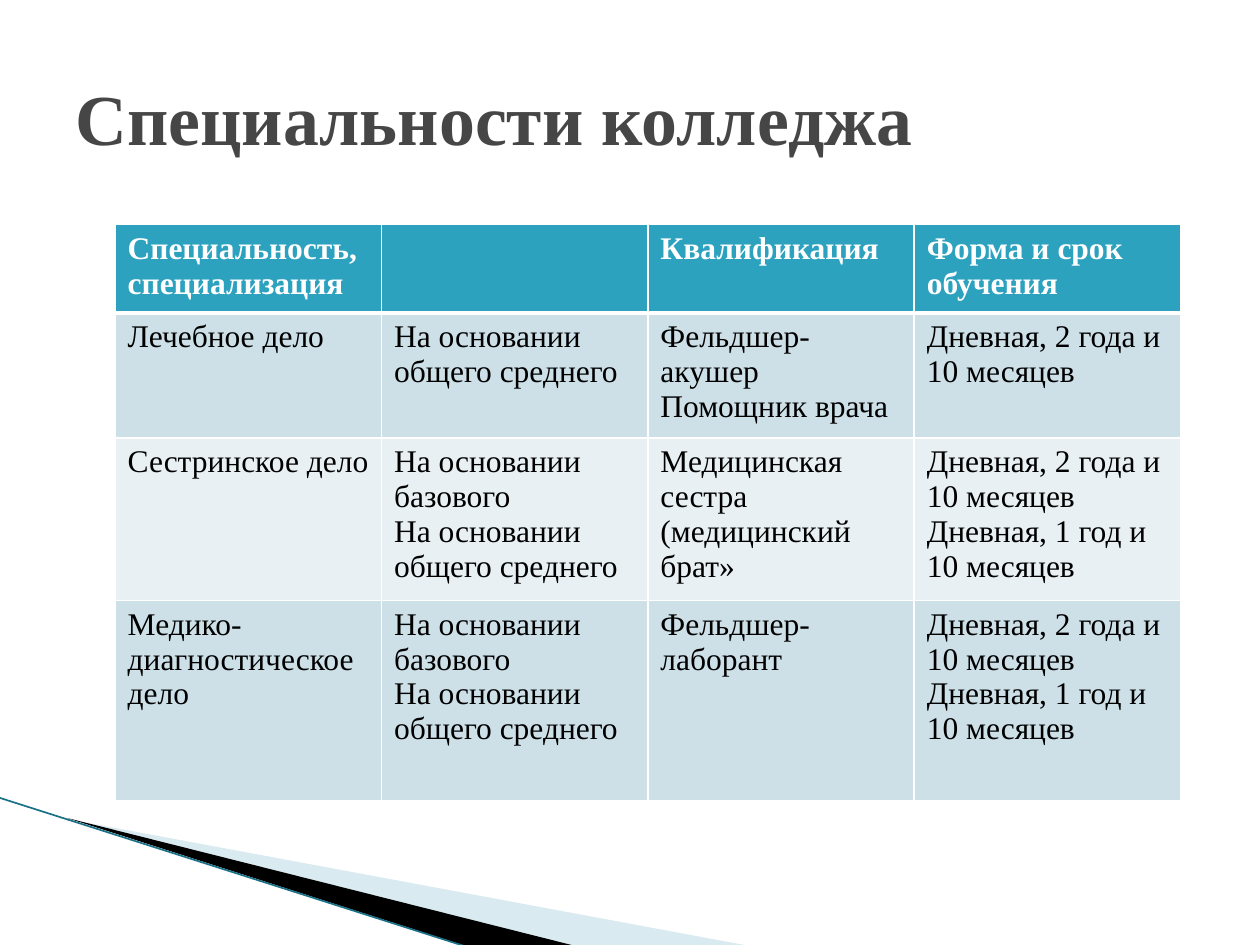
from lxml.etree import SubElement
from pptx import Presentation
from pptx.dml.color import RGBColor as Rgb
from pptx.enum.shapes import MSO_CONNECTOR as Connector
from pptx.enum.text import MSO_ANCHOR as Anchor, MSO_AUTO_SIZE as AutoSize, PP_ALIGN as Align
from pptx.oxml import parse_xml
from pptx.oxml.ns import nsdecls, qn
from pptx.util import Cm, Pt

COLORS = {
    "title": "464646",
    "header": "2DA2BF",
    "band_dark": "CDE0E8",
    "band_light": "E8F0F4",
    "white": "FFFFFF",
    "black": "000000",
    "wedge": "A0CBDC",
    "edge": "1A7187",
}
FONTS = {
    "title": {"name": "Times New Roman", "size": Pt(41), "bold": True},
    "header": {"name": "Times New Roman", "size": Pt(18), "bold": True},
    "body": {"name": "Times New Roman", "size": Pt(18), "bold": False},
}

SCHOOL = "На основании общего среднего"
BASIC = "На основании базового"
LONG = "Дневная, 2 года и 10 месяцев"
SHORT = "Дневная, 1 год и 10 месяцев"
ROWS = [
    ["Специальность, специализация", "", "Квалификация", "Форма и срок обучения"],
    ["Лечебное дело", SCHOOL, "Фельдшер-акушер\nПомощник врача", LONG],
    ["Сестринское дело", f"{BASIC}\n{SCHOOL}",
     "Медицинская сестра (медицинский брат»", f"{LONG}\n{SHORT}"],
    ["Медико-диагностическое дело", f"{BASIC}\n{SCHOOL}",
     "Фельдшер-лаборант", f"{LONG}\n{SHORT}"],
]
ROW_HEIGHTS = [1.78, 2.52, 3.28, 4.04]
COLUMN_WIDTH = 5.37


def color(name):
    return Rgb.from_string(COLORS[name])


class SlideBuilder:
    def __init__(self, page):
        self.page = page
        self.shapes = page.shapes

    def style(self, para, font, shade):
        for key, value in FONTS[font].items():
            setattr(para.font, key, value)
        para.font.color.rgb = color(shade)

    def title(self, text, left, top, width, height):
        box = self.shapes.title
        places = {"left": left, "top": top, "width": width, "height": height}
        for key, value in places.items():
            setattr(box, key, Cm(value))
        frame = box.text_frame
        frame.text = text
        for key, value in {"auto_size": AutoSize.NONE, "word_wrap": True,
                           "vertical_anchor": Anchor.MIDDLE}.items():
            setattr(frame, key, value)
        para = frame.paragraphs[0]
        para.alignment = Align.LEFT
        self.style(para, "title", "title")

    def wedge(self, points, shade, opacity=100):
        start, *others = [(Cm(x), Cm(y)) for x, y in points]
        outline = self.shapes.build_freeform(*start)
        outline.add_line_segments(others, close=True)
        shape = outline.convert_to_shape()
        shape.shadow.inherit = False
        shape.fill.solid()
        shape.fill.fore_color.rgb = color(shade)
        shape.line.fill.background()
        if opacity < 100:
            tint = shape.element.spPr.find(f"{qn('a:solidFill')}/{qn('a:srgbClr')}")
            SubElement(tint, qn("a:alpha"), val=str(opacity * 1000))

    def line(self, start, end, shade, weight):
        ends = [Cm(value) for value in (*start, *end)]
        link = self.shapes.add_connector(Connector.STRAIGHT, *ends)
        link.line.color.rgb = color(shade)
        link.line.width = Pt(weight)
        SubElement(link.element.spPr, qn("a:effectLst"))

    def borders(self, cell, weights):
        properties = cell._tc.get_or_add_tcPr()
        for index, (side, weight) in enumerate(weights.items()):
            properties.insert(index, parse_xml(
                f'<a:ln{side} {nsdecls("a")} w="{Pt(weight)}"><a:solidFill>'
                f'<a:srgbClr val="{COLORS["white"]}"/></a:solidFill></a:ln{side}>'))

    def cell(self, cell, text, row):
        header = row == 0
        band = "header" if header else "band_dark" if row % 2 else "band_light"
        cell.text = text
        for para in cell.text_frame.paragraphs:
            self.style(para, "header" if header else "body", "white" if header else "black")
        cell.fill.solid()
        cell.fill.fore_color.rgb = color(band)
        self.borders(cell, {"L": 1, "R": 1, "T": 3 if row == 1 else 1, "B": 3 if header else 1})

    def table(self, rows, left, top, column_width, heights):
        count = len(rows[0])
        grid = self.shapes.add_table(
            len(rows), count, Cm(left), Cm(top), Cm(column_width * count), Cm(sum(heights))).table
        for column in grid.columns:
            column.width = Cm(column_width)
        for index, (texts, height) in enumerate(zip(rows, heights)):
            grid.rows[index].height = Cm(height)
            for position, text in enumerate(texts):
                self.cell(grid.cell(index, position), text, index)


def main():
    deck = Presentation()
    deck.slide_width, deck.slide_height = Cm(25.4), Cm(19.05)
    slide = SlideBuilder(deck.slides.add_slide(deck.slide_layouts[5]))
    slide.wedge([(1.4, 16.52), (15.11, 19.07), (11.58, 19.07)], "wedge", 40)
    slide.wedge([(1.35, 16.49), (11.6, 19.07), (9.45, 19.09)], "black")
    slide.line((-0.02, 16.08), (9.42, 19.09), "edge", 0.95)
    slide.table(ROWS, 2.32, 4.53, COLUMN_WIDTH, ROW_HEIGHTS)
    slide.title("Специальности колледжа", 1.27, 0.76, 22.86, 3.18)
    deck.save("out.pptx")


if __name__ == "__main__":
    main()
